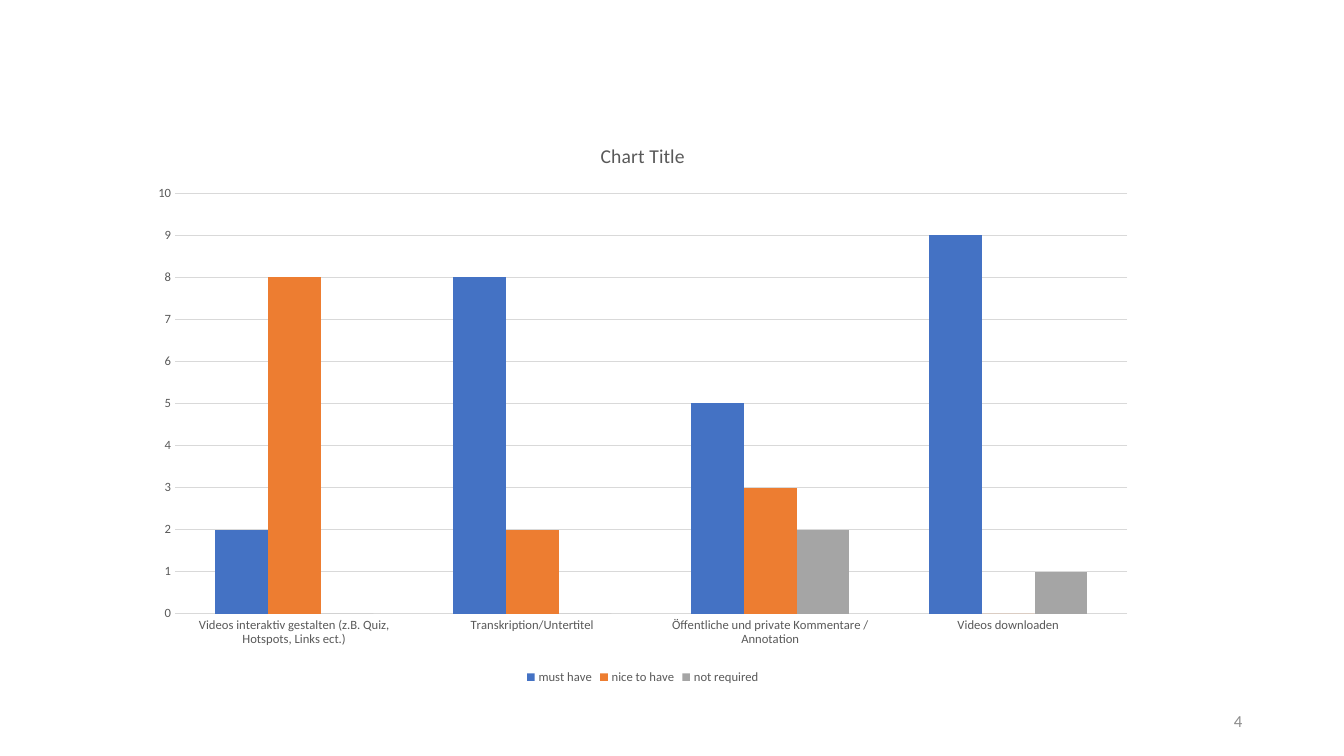
"""Build a slide with a clustered column chart of video feature priorities."""
from dataclasses import dataclass

from pptx import Presentation
from pptx.chart.data import CategoryChartData
from pptx.dml.color import RGBColor
from pptx.enum.chart import XL_CHART_TYPE, XL_LEGEND_POSITION, XL_TICK_MARK
from pptx.enum.text import MSO_ANCHOR, PP_ALIGN
from pptx.util import Inches, Pt

COLUMN_CLUSTERED = XL_CHART_TYPE.COLUMN_CLUSTERED
LEGEND_BOTTOM = XL_LEGEND_POSITION.BOTTOM
NO_TICK = XL_TICK_MARK.NONE
MIDDLE = MSO_ANCHOR.MIDDLE
RIGHT = PP_ALIGN.RIGHT

SLIDE_WIDTH, SLIDE_HEIGHT = 13.33, 7.5
BLANK_LAYOUT = 6
FONT = "Calibri"
TEXT_COLOUR = "595959"
GRID_COLOUR = "D9D9D9"
NUMBER_COLOUR = "8C8C8C"

CATEGORIES = (
    "Videos interaktiv gestalten (z.B. Quiz, Hotspots, Links ect.)",
    "Transkription/Untertitel",
    "Öffentliche und private Kommentare / Annotation",
    "Videos downloaden",
)


@dataclass(frozen=True)
class Area:
    """A rectangle measured in inches."""
    left: float
    top: float
    width: float
    height: float

    def lengths(self) -> list:
        """Return left, top, width and height as slide lengths."""
        return [Inches(n) for n in (self.left, self.top, self.width, self.height)]


@dataclass(frozen=True)
class Priority:
    """One chart series with its colour."""
    name: str
    votes: tuple
    colour: str


CHART_AREA = Area(1.37, 1.21, 10.01, 5.62)
NUMBER_AREA = Area(9.42, 6.95, 3, 0.4)
PRIORITIES = (
    Priority("must have", (2, 8, 5, 9), "4472C4"),
    Priority("nice to have", (8, 2, 3, 0), "ED7D31"),
    Priority("not required", (0, 0, 2, 1), "A5A5A5"),
)


def colour(code: str) -> RGBColor:
    """Turn a hex string into a colour."""
    return RGBColor.from_string(code)


def apply_format(target, values: dict) -> None:
    """Set every attribute named in the format values."""
    for name, value in values.items():
        setattr(target, name, value)


def format_font(font, size: float, code: str = TEXT_COLOUR) -> None:
    """Give a font the slide's face with a size and a colour."""
    apply_format(font, {"name": FONT, "size": Pt(size), "bold": False})
    font.color.rgb = colour(code)


def format_axes(chart) -> None:
    """Style both axes and the horizontal gridlines."""
    for axis in (chart.category_axis, chart.value_axis):
        apply_format(axis, {"major_tick_mark": NO_TICK, "minor_tick_mark": NO_TICK})
        axis.format.line.fill.background()
        format_font(axis.tick_labels.font, 9)
    apply_format(chart.value_axis, {
        "minimum_scale": 0, "maximum_scale": 10, "major_unit": 1,
        "has_major_gridlines": True,
    })
    grid_line = chart.value_axis.major_gridlines.format.line
    grid_line.width = Pt(0.75)
    grid_line.color.rgb = colour(GRID_COLOUR)


def add_priority_chart(page) -> None:
    """Draw the column chart with its title and legend."""
    data = CategoryChartData()
    data.categories = CATEGORIES
    for priority in PRIORITIES:
        data.add_series(priority.name, priority.votes)
    chart = page.shapes.add_chart(COLUMN_CLUSTERED, *CHART_AREA.lengths(), data).chart
    format_font(chart.font, 10, "000000")
    apply_format(chart, {"has_title": True, "has_legend": True})

    title = chart.chart_title
    title.include_in_layout = False
    span = title.text_frame.paragraphs[0].add_run()
    span.text = "Chart Title"
    format_font(span.font, 14)

    apply_format(chart.legend, {"position": LEGEND_BOTTOM, "include_in_layout": False})
    format_font(chart.legend.font, 9)

    plot = chart.plots[0]
    apply_format(plot, {"gap_width": 150, "overlap": 0, "vary_by_categories": False})
    for series, priority in zip(plot.series, PRIORITIES):
        series.invert_if_negative = False
        series.format.fill.solid()
        series.format.fill.fore_color.rgb = colour(priority.colour)
    format_axes(chart)


def add_page_number(page, number: str) -> None:
    """Write the page number at the lower right."""
    box = page.shapes.add_textbox(*NUMBER_AREA.lengths())
    apply_format(box.text_frame, {"word_wrap": True, "vertical_anchor": MIDDLE})
    para = box.text_frame.paragraphs[0]
    para.alignment = RIGHT
    span = para.add_run()
    span.text = number
    format_font(span.font, 12, NUMBER_COLOUR)


def main() -> None:
    """Build and save the deck."""
    deck = Presentation()
    apply_format(deck, {
        "slide_width": Inches(SLIDE_WIDTH), "slide_height": Inches(SLIDE_HEIGHT),
    })
    page = deck.slides.add_slide(deck.slide_layouts[BLANK_LAYOUT])
    add_page_number(page, "4")
    add_priority_chart(page)
    deck.save("out.pptx")


if __name__ == "__main__":
    main()
